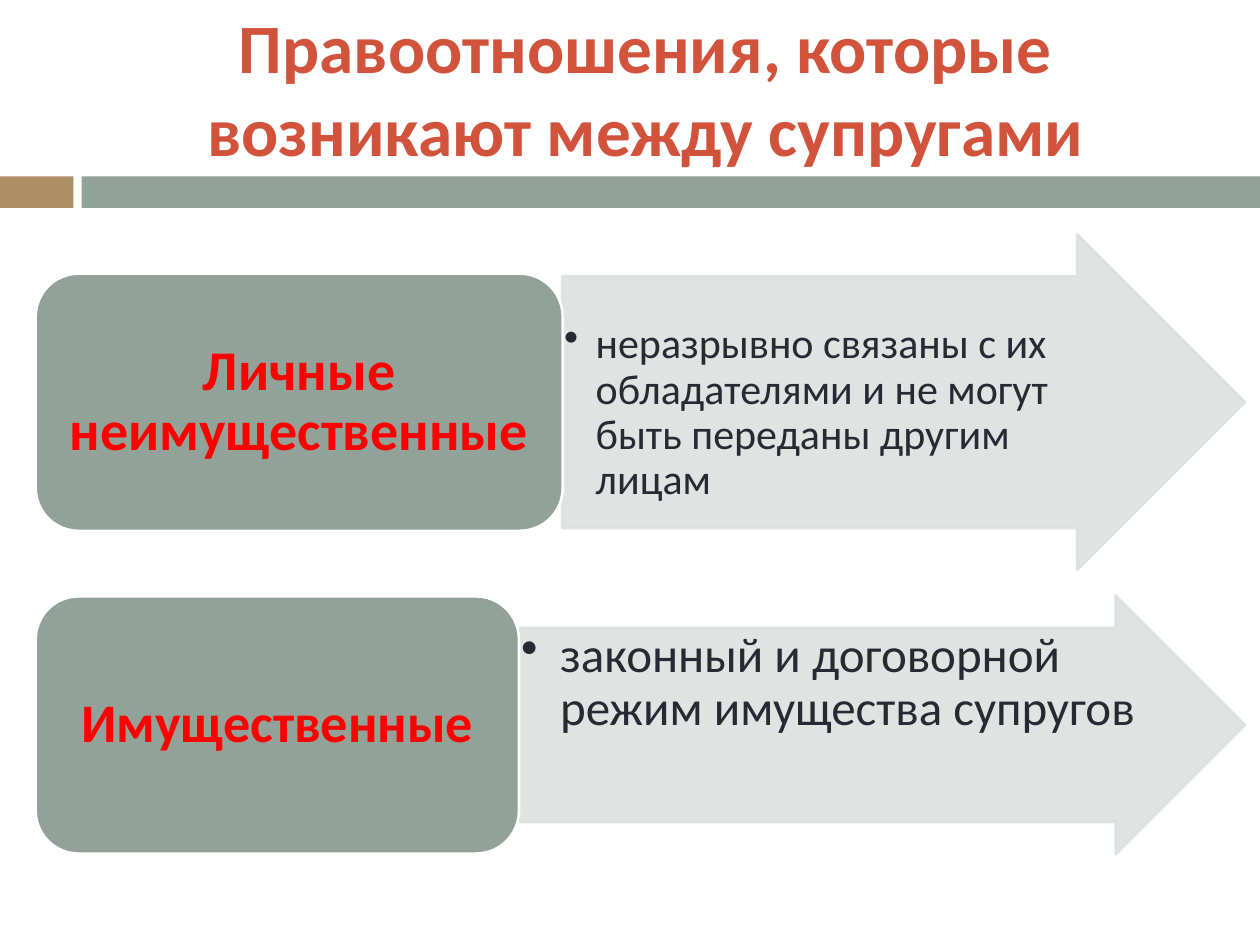
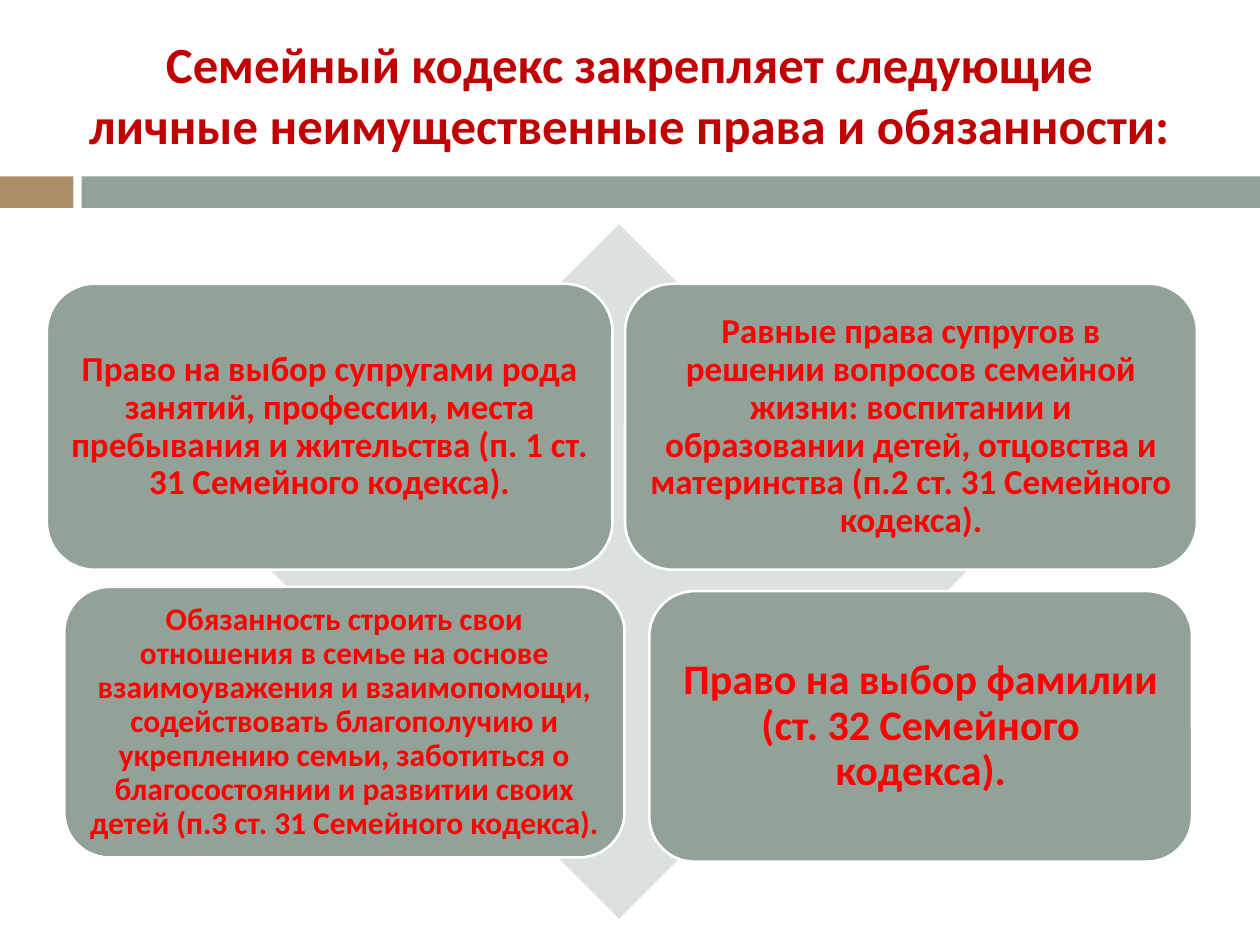
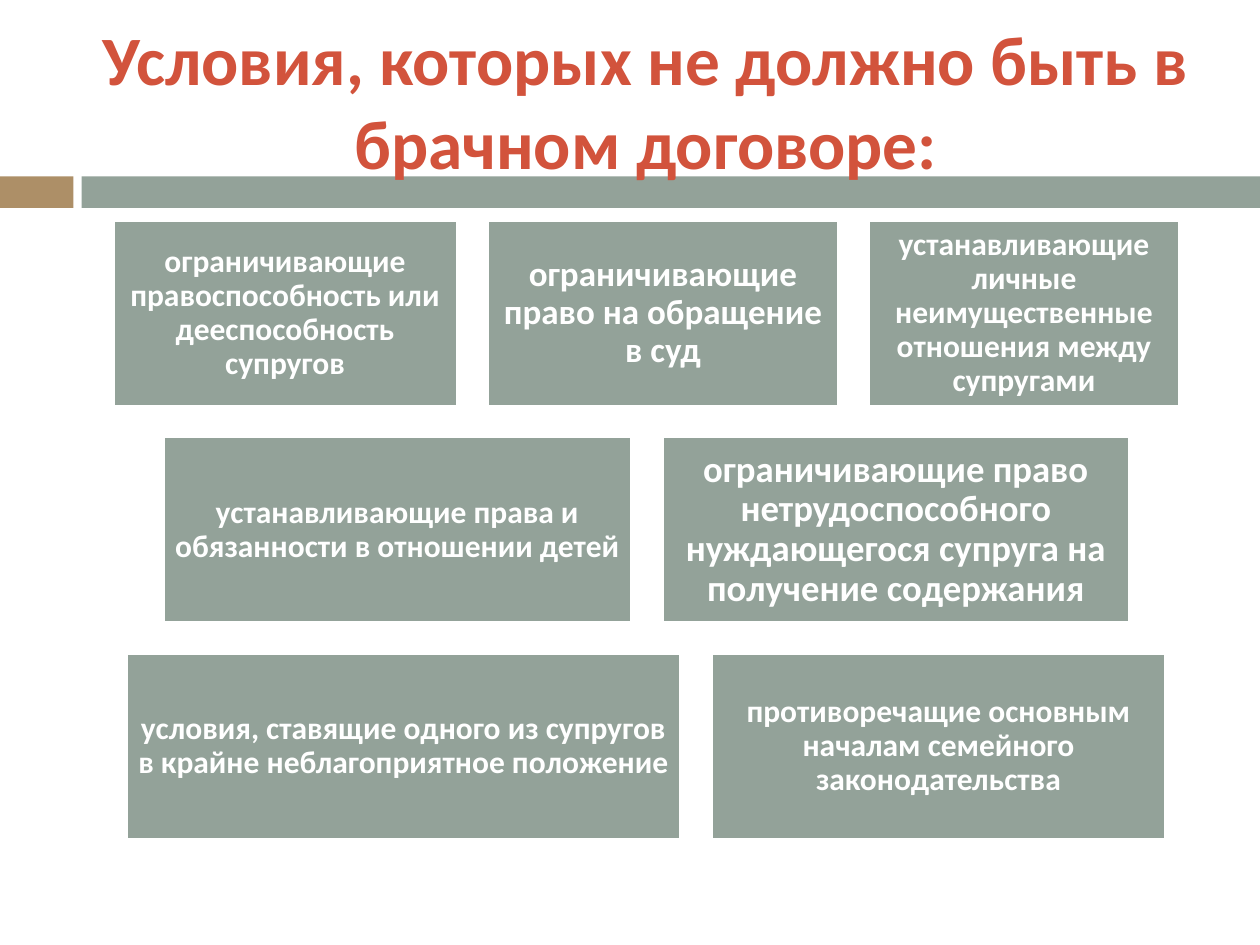
"""Build three slides on the legal relations between spouses."""
from dataclasses import dataclass

import lxml.etree
import pptx
import pptx.dml.color
import pptx.enum.shapes
import pptx.enum.text
import pptx.oxml.ns
import pptx.util

Pt = pptx.util.Pt
qn = pptx.oxml.ns.qn
MSO_SHAPE = pptx.enum.shapes.MSO_SHAPE
ANCHOR = pptx.enum.text.MSO_ANCHOR
ALIGN = pptx.enum.text.PP_ALIGN

FONT = "Calibri"
SAGE, PALE, TAN = "93A299", "DCE0DE", "AD8F67"
WHITE, INK, RED = "FFFFFF", "292934", "FF0000"
TITLE_RED, DARK_RED = "D2533C", "C00000"
Box = tuple[float, float, float, float]


@dataclass(frozen=True)
class Band:
    left: float
    width: float
    color: str


@dataclass(frozen=True)
class Heading:
    text: str
    box: Box
    size: float = 39.6
    color: str = TITLE_RED
    anchor: ANCHOR = ANCHOR.MIDDLE
    bottom: float = 3.6


@dataclass(frozen=True)
class Card:
    text: str
    box: Box
    size: float
    color: str = RED
    shape: MSO_SHAPE = MSO_SHAPE.ROUNDED_RECTANGLE
    inset_y: float = 0.3


@dataclass(frozen=True)
class Arrow:
    text: str
    box: Box
    size: float
    indent: float
    top: float


@dataclass(frozen=True)
class Cell:
    text: str
    width: float
    size: float = 18


BANDS = [Band(0, 42, TAN), Band(46.6, 673.4, SAGE)]
BAND_TOP, BAND_HEIGHT = 100.8, 18

SPOUSES = Heading("Правоотношения, которые возникают между супругами",
                  (48, 31.7, 642, 85), bottom=51.9)
ARROWS = [
    Arrow("неразрывно связаны с их обладателями и не могут быть переданы другим лицам",
          (321.2, 133.9, 390.2, 191.8), 24, 18, 26.5),
    Arrow("законный и договорной режим имущества супругов",
          (296.6, 340.4, 414.8, 147.8), 28, 22.3, 1.4),
]
KINDS = [
    Card("Личные неимущественные", (20.4, 156.4, 301.2, 147), 32, inset_y=0.15),
    Card("Имущественные", (20.4, 340.8, 276.2, 147), 31, inset_y=0.15),
]

CODE = Heading("Семейный кодекс закрепляет следующие личные неимущественные права и обязанности:",
               (36, 15, 648, 85), 29, DARK_RED, ANCHOR.TOP)
RIGHTS = [
    Card("Право на выбор супругами рода занятий, профессии, места пребывания "
         "и жительства (п. 1 ст. 31 Семейного кодекса).",
         (26.8, 162.2, 323.2, 163.4), 20),
    Card("Равные права супругов в решении вопросов семейной жизни: воспитании и "
         "образовании детей, отцовства и материнства (п.2 ст. 31 Семейного кодекса).",
         (357.2, 162.2, 326.8, 163.4), 20),
    Card("Обязанность строить свои отношения в семье на основе взаимоуважения и "
         "взаимопомощи, содействовать благополучию и укреплению семьи, заботиться о "
         "благосостоянии и развитии своих детей (п.3 ст. 31 Семейного кодекса).",
         (36.7, 335.4, 320.2, 154.6), 18),
    Card("Право на выбор фамилии (ст. 32 Семейного кодекса).",
         (371, 337.8, 310.2, 154.6), 24),
]

CONTRACT = Heading("Условия, которых не должно быть в брачном договоре:",
                   (48, 18, 642, 78))
CONDITIONS = [
    [Cell("ограничивающие правоспособность или дееспособность супругов", 196.4),
     Cell("ограничивающие право на обращение в суд", 200, 20),
     Cell("устанавливающие личные неимущественные отношения между супругами", 177)],
    [Cell("устанавливающие права и обязанности в отношении детей", 267.6),
     Cell("ограничивающие право нетрудоспособного нуждающегося супруга на "
          "получение содержания", 266.4, 21)],
    [Cell("условия, ставящие одного из супругов в крайне неблагоприятное положение", 316.4),
     Cell("противоречащие основным началам семейного законодательства", 259.4)],
]
GRID_CENTER, GRID_TOP, GRID_GAP, CELL_HEIGHT = 369.2, 126, 17.8, 106


def rgb(color: str) -> pptx.dml.color.RGBColor:
    """Turn a hex string into a colour."""
    return pptx.dml.color.RGBColor.from_string(color)


def add_shape(slide, kind: MSO_SHAPE, box: Box, fill: str, line: str | None = None):
    """Draw a flat shape with an optional outline."""
    sp = slide.shapes.add_shape(kind, *map(Pt, box))
    sp.shadow.inherit = False
    sp.fill.solid()
    sp.fill.fore_color.rgb = rgb(fill)
    if line:
        sp.line.color.rgb = rgb(line)
        sp.line.width = Pt(1.5)
    else:
        sp.line.fill.background()
    return sp


def set_insets(tf, left: float, top: float, right: float, bottom: float) -> None:
    """Set the four text margins and turn on wrapping."""
    tf.word_wrap = True
    tf.margin_left, tf.margin_top = Pt(left), Pt(top)
    tf.margin_right, tf.margin_bottom = Pt(right), Pt(bottom)


def add_run(p, text: str, size: float, color: str, bold: bool = True) -> None:
    """Append a formatted run to a paragraph."""
    r = p.add_run()
    r.text = text
    r.font.name, r.font.size, r.font.bold = FONT, Pt(size), bold
    r.font.color.rgb = rgb(color)


def add_bands(prs, slide) -> None:
    """Draw the bands and move them behind the placeholders of the master."""
    for i, band in enumerate(BANDS):
        sp = add_shape(slide, MSO_SHAPE.RECTANGLE,
                       (band.left, BAND_TOP, band.width, BAND_HEIGHT), band.color)
        sp.element.xpath(".//p:cNvPr")[0].set("id", str(100 + i))
        prs.slide_master.shapes.element.insert(2 + i, sp.element)


def add_slide(prs, heading: Heading):
    """Add a slide with a formatted title."""
    slide = prs.slides.add_slide(prs.slide_layouts[5])
    sp = slide.shapes.title
    sp.left, sp.top, sp.width, sp.height = map(Pt, heading.box)
    tf = sp.text_frame
    tf.auto_size = pptx.enum.text.MSO_AUTO_SIZE.NONE
    tf.vertical_anchor = heading.anchor
    set_insets(tf, 7.2, 3.6, 7.2, heading.bottom)
    p = tf.paragraphs[0]
    p.alignment = ALIGN.CENTER
    add_run(p, heading.text, heading.size, heading.color)
    return slide


def add_card(slide, card: Card) -> None:
    """Draw a sage card with centred bold text."""
    sp = add_shape(slide, card.shape, card.box, SAGE, WHITE)
    tf = sp.text_frame
    tf.vertical_anchor = ANCHOR.MIDDLE
    x, y = 0.3 * card.size, card.inset_y * card.size
    set_insets(tf, x, y, x, y)
    p = tf.paragraphs[0]
    p.alignment, p.line_spacing = ALIGN.CENTER, 0.9
    add_run(p, card.text, card.size, card.color)


def add_arrow(slide, arrow: Arrow) -> None:
    """Draw a translucent block arrow with one bulleted paragraph."""
    sp = add_shape(slide, MSO_SHAPE.RIGHT_ARROW, arrow.box, PALE, PALE)
    sp.adjustments[0], sp.adjustments[1] = 0.75, 0.5
    for color in sp.element.spPr.iter(qn("a:srgbClr")):
        lxml.etree.SubElement(color, qn("a:alpha")).set("val", "90000")
    tf = sp.text_frame
    tf.vertical_anchor = ANCHOR.TOP
    set_insets(tf, 1.2, arrow.top, 1.2, 1.2)
    p = tf.paragraphs[0]
    p.alignment, p.line_spacing = ALIGN.LEFT, 0.9
    pPr = p._p.get_or_add_pPr()
    pPr.set("marL", str(Pt(arrow.indent)))
    pPr.set("indent", str(-Pt(arrow.indent)))
    lxml.etree.SubElement(pPr, qn("a:buChar")).set("char", "•")
    add_run(p, arrow.text, arrow.size, INK, bold=False)


def add_grid(slide, rows: list[list[Cell]]) -> None:
    """Lay out centred rows of cells with equal gaps."""
    for i, row in enumerate(rows):
        top = GRID_TOP + i * (CELL_HEIGHT + GRID_GAP)
        total = sum(cell.width for cell in row) + GRID_GAP * (len(row) - 1)
        left = GRID_CENTER - total / 2
        for cell in row:
            add_card(slide, Card(cell.text, (left, top, cell.width, CELL_HEIGHT),
                                 cell.size, WHITE, MSO_SHAPE.RECTANGLE))
            left += cell.width + GRID_GAP


def main() -> None:
    """Build and save the presentation."""
    prs = pptx.Presentation()
    prs.slide_width, prs.slide_height = Pt(720), Pt(540)

    slide = add_slide(prs, SPOUSES)
    add_bands(prs, slide)
    for arrow, card in zip(ARROWS, KINDS):
        add_arrow(slide, arrow)
        add_card(slide, card)

    slide = add_slide(prs, CODE)
    add_shape(slide, MSO_SHAPE.DIAMOND, (155.4, 128.2, 396.8, 396.8), PALE)
    for card in RIGHTS:
        add_card(slide, card)

    slide = add_slide(prs, CONTRACT)
    add_grid(slide, CONDITIONS)

    prs.save("out.pptx")


if __name__ == "__main__":
    main()
